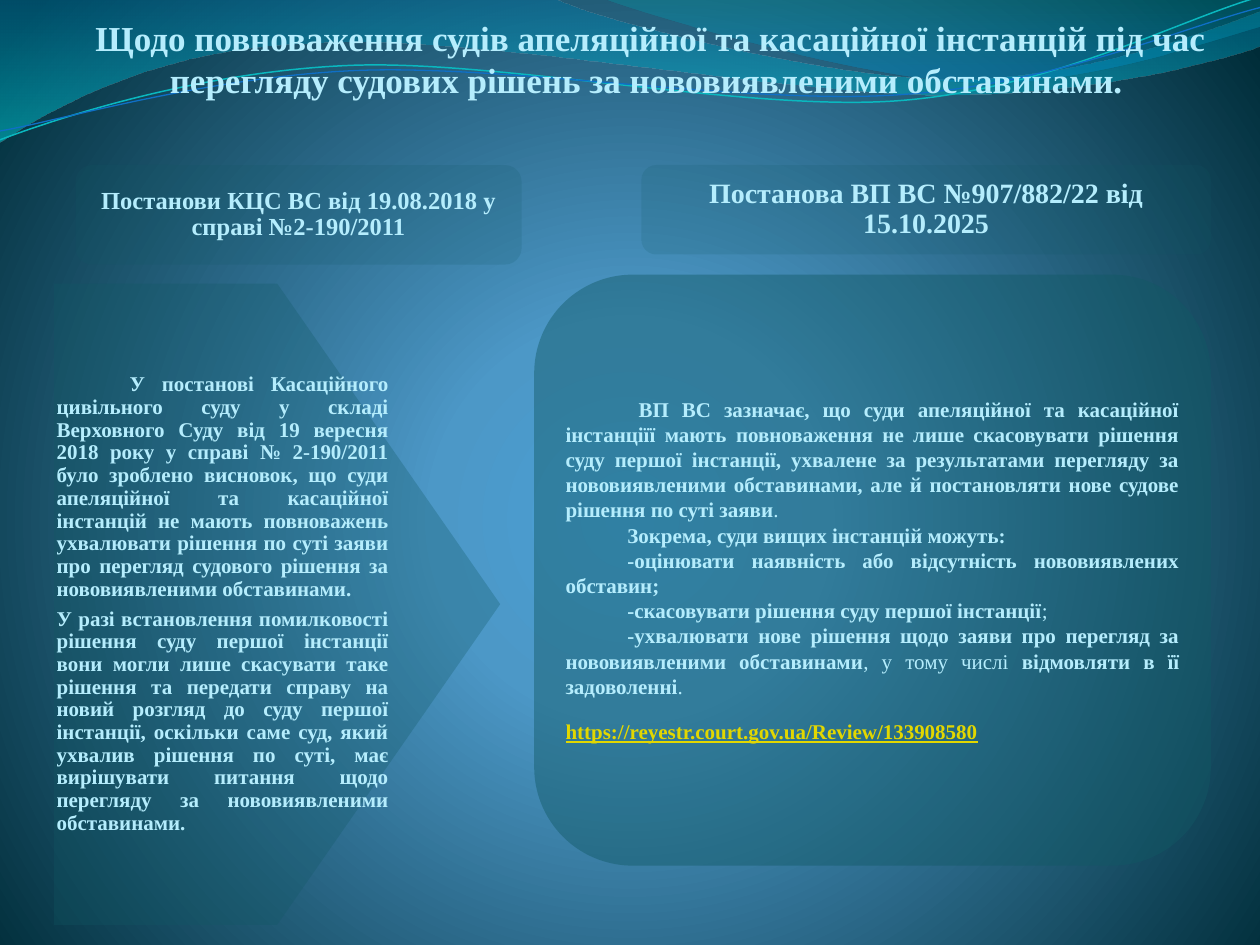
from pptx import Presentation
from pptx.dml.color import RGBColor
from pptx.enum.shapes import MSO_SHAPE as Kind
from pptx.enum.text import MSO_ANCHOR as Anchor, MSO_AUTO_SIZE as AutoSize, PP_ALIGN as Align
from pptx.oxml import parse_xml
from pptx.oxml.ns import nsdecls
from pptx.util import Inches, Pt

CELL = Inches(0.1)
COLUMNS, ROWS = 100, 75
FONT = "Times New Roman"
PALE, TEAL, YELLOW = "B5EDFD", "115964", "E2D700"
DOWN = '<a:lin ang="5400000" scaled="1"/>'
RADIAL = '<a:path path="circle"><a:fillToRect l="10000" t="110000" r="10000" b="100000"/></a:path>'

BROAD_WAVE = [(0, 0), (44, -0.1), (47.6, 1.7, 66.4, 6.3, 75.8, 6.3), (85.3, 6.3, 95.8, 2.6, 100, 0.9),
              (100.1, 3.6), (98.3, 4.4, 87, 7.6, 74.6, 7.5), (62.2, 7.5, 38.2, 2.8, 25.7, 3.4),
              (12.9, 3.6, 4.6, 8.3, -0.1, 11.3)]
RIGHT_WAVE = [(47.9, -0.1), (50.9, 1.1, 68.2, 6.2, 76.9, 6.5), (85.6, 6.9, 96.1, 3.2, 100, 2.1), (100, 0)]
UPPER_LINE = [(0, 11.1), (4.8, 9.3, 15.8, 5.7, 27.7, 5.2), (39.5, 4.7, 59.3, 8.9, 71.3, 8),
              (83.3, 7.1, 93.8, 1.5, 99.8, -0.2)]
LOWER_LINE = [(0, 10.4), (4.7, 9.6, 16.4, 6.1, 28.3, 5.6), (40.3, 5.1, 59.7, 8.4, 71.7, 7.5),
              (83.6, 6.7, 94.1, 2.1, 100, 0.6)]

TITLE = " Щодо повноваження судів апеляційної та касаційної інстанцій під час перегляду судових рішень за нововиявленими обставинами."
LEFT_HEAD = "Постанови КЦС ВС від 19.08.2018 у справі №2-190/2011"
RIGHT_HEAD = "Постанова ВП ВС №907/882/22 від 15.10.2025"
LEFT_TEXT = [
    "У постанові Касаційного цивільного суду у складі Верховного Суду від 19 вересня 2018 року у справі № 2-190/2011 було зроблено висновок, що суди апеляційної та касаційної інстанцій не мають повноважень ухвалювати рішення по суті заяви про перегляд судового рішення за нововиявленими обставинами.",
    "У разі встановлення помилковості рішення суду першої інстанції вони могли лише скасувати таке рішення та передати справу на новий розгляд до суду першої інстанції, оскільки саме суд, який ухвалив рішення по суті, має вирішувати питання щодо перегляду за нововиявленими обставинами.",
]
RIGHT_TEXT = [
    ["ВП ВС зазначає, що суди апеляційної та касаційної інстанціїї мають повноваження не лише скасовувати рішення суду першої інстанції, ухвалене за результатами перегляду за нововиявленими обставинами, але й постановляти нове судове рішення по суті заяви", "."],
    ["Зокрема, суди вищих інстанцій можуть:"],
    ["-оцінювати наявність або відсутність нововиявлених обставин;"],
    ["-скасовувати рішення суду першої інстанції", ";"],
    ["-ухвалювати нове рішення щодо заяви про перегляд за нововиявленими обставинами",
     ", у тому числі ", "відмовляти в її задоволенні", "."],
]
LINK = "https://reyestr.court.gov.ua/Review/133908580"


def color(value):
    """Turn a hex string into a colour."""
    return RGBColor.from_string(value)


def apply(target, values):
    """Set every attribute named in values."""
    for name, value in values.items():
        setattr(target, name, value)


def set_alpha(solid, percent):
    """Make a solid fill element partly transparent."""
    solid[0].append(parse_xml(f'<a:alpha {nsdecls("a")} val="{percent * 1000}"/>'))


def swap_gradient(solid, stops, direction):
    """Replace a solid fill element by a gradient of (position, colour, opacity)."""
    marks = "".join(
        f'<a:gs pos="{place * 1000}"><a:srgbClr val="{tone}"><a:alpha val="{alpha * 1000}"/></a:srgbClr></a:gs>'
        for place, tone, alpha in stops)
    solid.getparent().replace(solid, parse_xml(
        f'<a:gradFill {nsdecls("a")} rotWithShape="1"><a:gsLst>{marks}</a:gsLst>{direction}</a:gradFill>'))


def paint_background(page):
    """Fill the page with a radial glow."""
    page.background.fill.solid()
    solid = page._element.xpath(".//p:bgPr/a:solidFill")[0]
    swap_gradient(solid, [(0, "4AA0D6", 100), (25, "4C98C7", 100), (100, "002C38", 100)], RADIAL)


def bend(shape, steps):
    """Turn the straight segments that have control points into cubic curves."""
    for line, step in zip(shape._element.xpath(".//a:lnTo"), steps):
        if len(step) == 6:
            points = "".join(f'<a:pt x="{round(x * CELL) - shape.left}" y="{round(y * CELL) - shape.top}"/>'
                             for x, y in zip(step[::2], step[1::2]))
            line.getparent().replace(line, parse_xml(
                f'<a:cubicBezTo {nsdecls("a")}>{points}</a:cubicBezTo>'))


def add_outline(page, steps, closed):
    """Draw a freeform along lines and cubic curves."""
    start, *rest = [tuple(cells * CELL for cells in step[-2:]) for step in steps]
    builder = page.shapes.build_freeform(*start)
    builder.add_line_segments(rest, close=closed)
    shape = builder.convert_to_shape()
    bend(shape, steps[1:])
    shape.shadow.inherit = False
    return shape


def add_wave(page, steps, stops):
    """Add a filled wave without an edge."""
    wave = add_outline(page, steps, True)
    wave.line.fill.background()
    wave.fill.solid()
    swap_gradient(wave._element.xpath("./p:spPr/a:solidFill")[0], stops, DOWN)


def add_curve(page, steps, tone, width):
    """Add a thin open curve."""
    curve = add_outline(page, steps, False)
    curve.fill.background()
    curve.line.color.rgb = color(tone)
    curve.line.width = Pt(width)


def set_frame(frame, anchor, insets):
    """Set anchor and the left, top, right and bottom insets."""
    apply(frame, {"word_wrap": True, "auto_size": AutoSize.NONE, "vertical_anchor": anchor})
    sides = ("margin_left", "margin_top", "margin_right", "margin_bottom")
    apply(frame, {side: Inches(inset) for side, inset in zip(sides, insets)})


def write(frame, texts, size, indent=0, tone=PALE, underline=None, **layout):
    """Append a paragraph whose spans alternate between bold and plain."""
    para = frame.paragraphs[0] if not frame.text else frame.add_paragraph()
    apply(para, layout)
    if indent:
        para._p.get_or_add_pPr().set("indent", str(Inches(indent)))
    for index, text in enumerate(texts):
        span = para.add_run()
        span.text = text
        apply(span.font, {"name": FONT, "size": Pt(size), "bold": index % 2 == 0, "underline": underline})
        span.font.color.rgb = color(tone)


def add_panel(page, kind, area, alpha, insets):
    """Add a translucent shape and return its text frame."""
    panel = page.shapes.add_shape(kind, *(int(cells * CELL) for cells in area))
    panel.shadow.inherit = False
    panel.line.fill.background()
    panel.fill.solid()
    panel.fill.fore_color.rgb = color(TEAL)
    set_alpha(panel._element.xpath("./p:spPr/a:solidFill")[0], alpha)
    set_frame(panel.text_frame, Anchor.MIDDLE, insets)
    return panel.text_frame


def add_title(page):
    """Place and fill the title in front of the waves."""
    title = page.shapes.title
    area = zip(("left", "top", "width", "height"), (6.7, 3.6, 89.4, 11))
    apply(title, {side: int(cells * CELL) for side, cells in area})
    set_frame(title.text_frame, Anchor.BOTTOM, (0, 0, 0.02, 0.66))
    write(title.text_frame, [TITLE], 20, alignment=Align.CENTER)
    title._element.getparent().append(title._element)


def main():
    """Build the slide and save it."""
    deck = Presentation()
    deck.slide_width, deck.slide_height = COLUMNS * CELL, ROWS * CELL
    page = deck.slides.add_slide(deck.slide_layouts[5])
    paint_background(page)
    add_wave(page, BROAD_WAVE, [(0, "0074A1", 45), (100, "00C6CF", 55)])
    add_wave(page, RIGHT_WAVE, [(0, "00A1A9", 30), (80, "008BBF", 45)])
    add_curve(page, UPPER_LINE, "0AB8BF", 0.85)
    add_curve(page, LOWER_LINE, "0F6FC6", 0.75)
    add_title(page)

    tight = {"alignment": Align.JUSTIFY, "line_spacing": 0.9}
    arrow = add_panel(page, Kind.PENTAGON, (4.3, 22.5, 35.4, 50.9), 29, (0.02, 0.01, 0, 0.01))
    for text, indent in zip(LEFT_TEXT, (0.58, 0)):
        write(arrow, [text], 12, indent, space_after=Pt(4.2), **tight)

    card = add_panel(page, Kind.FLOWCHART_ALTERNATE_PROCESS, (42.4, 21.8, 53.7, 46.9), 44, [0.02] * 4)
    for index, texts in enumerate(RIGHT_TEXT):
        write(card, texts, 12, 0.49 if index else 0.58, alignment=Align.JUSTIFY)
    write(card, [LINK], 12, tone=YELLOW, underline=True, space_before=Pt(13), **tight)

    heads = [(LEFT_HEAD, (6, 13.1, 35.4, 7.9), 17, 14, 0.06),
             (RIGHT_HEAD, (50.9, 13.1, 45.2, 7.1), 16, 16, 0.07)]
    for text, area, alpha, size, inset in heads:
        head = add_panel(page, Kind.ROUNDED_RECTANGLE, area, alpha, [inset] * 4)
        write(head, [text], size, alignment=Align.CENTER, line_spacing=0.9)
    deck.save("out.pptx")


if __name__ == "__main__":
    main()
